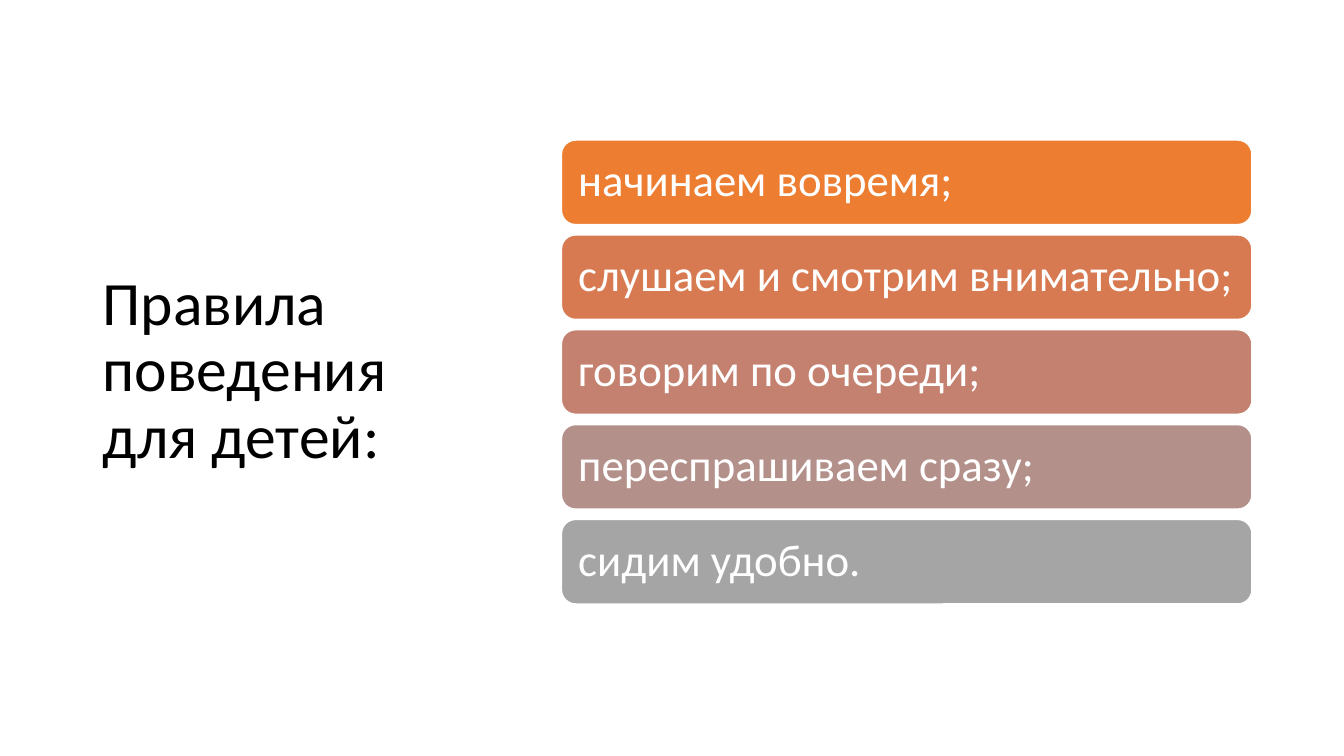
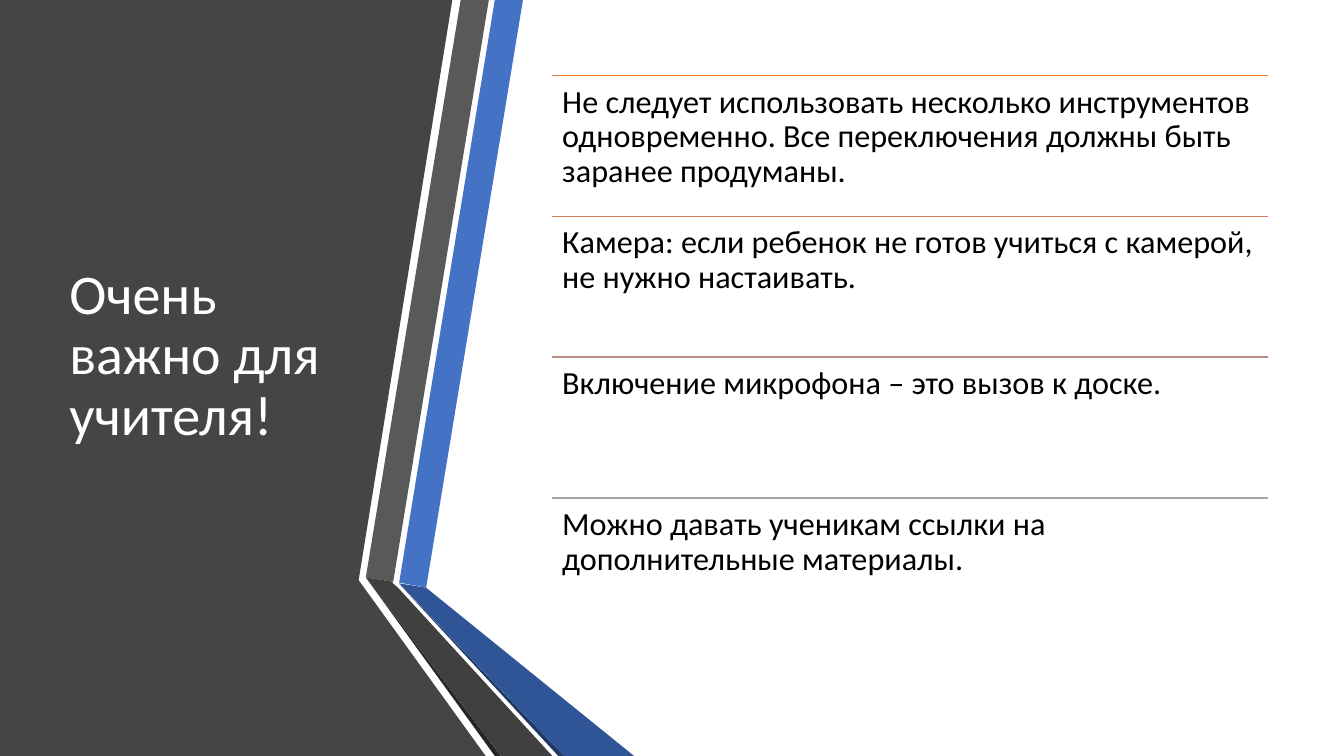
import dataclasses

import lxml.etree
import pptx
import pptx.dml.color
import pptx.enum.shapes
import pptx.enum.text
import pptx.oxml.ns
import pptx.shapes.autoshape
import pptx.slide
import pptx.text.text
import pptx.util

Cm = pptx.util.Cm
RGB = pptx.dml.color.RGBColor
Anchor = pptx.enum.text.MSO_ANCHOR

FONT = "Calibri"
WIDTH, HEIGHT = 33.87, 19.05
BLACK = RGB(0x00, 0x00, 0x00)
WHITE = RGB(0xFF, 0xFF, 0xFF)
ORANGE = RGB(0xED, 0x7D, 0x31)
TERRACOTTA = RGB(0xD8, 0x7A, 0x51)
ROSE = RGB(0xC4, 0x81, 0x70)
DUSTY_ROSE = RGB(0xB4, 0x90, 0x8B)
GRAY = RGB(0xA5, 0xA5, 0xA5)
RULE_TERRACOTTA = RGB(0xD1, 0x7B, 0x5C)
RULE_ROSE = RGB(0xB9, 0x8A, 0x82)
PANEL = RGB(0x45, 0x45, 0x45)
BLUE = RGB(0x44, 0x72, 0xC4)
DEEP_BLUE = RGB(0x2F, 0x55, 0x97)
NAVY = RGB(0x20, 0x38, 0x64)
STEEL = RGB(0x59, 0x59, 0x59)
CHARCOAL = RGB(0x40, 0x40, 0x40)
DARK = RGB(0x26, 0x26, 0x26)


@dataclasses.dataclass(frozen=True)
class Box:
    left: float
    top: float
    width: float
    height: float

    def lengths(self) -> list[pptx.util.Length]:
        return [Cm(v) for v in dataclasses.astuple(self)]

    def below(self, index: int, pitch: float) -> "Box":
        return dataclasses.replace(self, top=self.top + index * pitch)


@dataclasses.dataclass(frozen=True)
class Item:
    text: str
    color: RGB


@dataclasses.dataclass(frozen=True)
class Facet:
    color: RGB
    points: list[tuple[float, float]]


RULES_BOX = Box(14.15, 3.53, 17.4, 2.13)
RULES_PITCH = 2.39
RULES = [
    Item("начинаем вовремя;", ORANGE),
    Item("слушаем и смотрим внимательно;", TERRACOTTA),
    Item("говорим по очереди;", ROSE),
    Item("переспрашиваем сразу;", DUSTY_ROSE),
    Item("сидим удобно.", GRAY),
]

ADVICE_BOX = Box(13.92, 1.9, 18.03, 3.55)
ADVICE = [
    Item("Не следует использовать несколько инструментов одновременно. "
         "Все переключения должны быть заранее продуманы.", ORANGE),
    Item("Камера: если ребенок не готов учиться с камерой, "
         "не нужно настаивать.", RULE_TERRACOTTA),
    Item("Включение микрофона – это вызов к доске.", RULE_ROSE),
    Item("Можно давать ученикам ссылки на дополнительные материалы.", GRAY),
]

FACETS = [
    Facet(PANEL, [(0, 0), (11.4, 0), (9.04, 14.62), (12.24, HEIGHT), (0, HEIGHT)]),
    Facet(BLUE, [(10.06, 14.68), (10.74, 14.81), (13.18, 0), (12.47, 0)]),
    Facet(STEEL, [(12.32, 0), (11.61, 0), (9.22, 14.55), (9.91, 14.66)]),
    Facet(DARK, [(9.22, 14.55), (12.47, HEIGHT), (12.62, HEIGHT)]),
    Facet(NAVY, [(10.06, 14.71), (14.07, HEIGHT), (14.22, HEIGHT)]),
    Facet(DEEP_BLUE, [(10.06, 14.7), (14.22, HEIGHT), (15.98, HEIGHT), (10.74, 14.81)]),
    Facet(CHARCOAL, [(13.92, HEIGHT), (10.03, 14.81), (9.88, 14.68),
                     (9.91, 14.66), (9.22, 14.55), (12.62, HEIGHT)]),
]


def write(tf: pptx.text.text.TextFrame, text: str, size: float, color: RGB,
          anchor: Anchor, inset: float) -> None:
    tf.word_wrap = True
    tf.vertical_anchor = anchor
    tf.margin_left = tf.margin_right = tf.margin_top = tf.margin_bottom = Cm(inset)
    p = tf.paragraphs[0]
    p.alignment = pptx.enum.text.PP_ALIGN.LEFT
    p.line_spacing = 0.9
    r = p.add_run()
    r.text = text
    r.font.name = FONT
    r.font.size = pptx.util.Pt(size)
    r.font.color.rgb = color


def add_text(s: pptx.slide.Slide, box: Box, text: str, size: float, color: RGB,
             anchor: Anchor = Anchor.TOP) -> None:
    sp = s.shapes.add_textbox(*box.lengths())
    write(sp.text_frame, text, size, color, anchor, 0.25)


def add_title(s: pptx.slide.Slide, box: Box, text: str, size: float, color: RGB) -> None:
    add_text(s, box, text, size, color, Anchor.MIDDLE)


def paint(sp: pptx.shapes.autoshape.Shape, color: RGB) -> None:
    sp.shadow.inherit = False
    sp.fill.solid()
    sp.fill.fore_color.rgb = color
    sp.line.fill.background()


def add_bar(s: pptx.slide.Slide, box: Box, item: Item) -> None:
    sp = s.shapes.add_shape(pptx.enum.shapes.MSO_SHAPE.ROUNDED_RECTANGLE, *box.lengths())
    paint(sp, item.color)
    sp.line.color.rgb = WHITE
    sp.line.width = pptx.util.Pt(1)
    write(sp.text_frame, item.text, 32, WHITE, Anchor.MIDDLE, 0.32)


def add_facet(s: pptx.slide.Slide, facet: Facet) -> None:
    start, *rest = [(Cm(x), Cm(y)) for x, y in facet.points]
    builder = s.shapes.build_freeform(*start)
    builder.add_line_segments(rest, close=True)
    paint(builder.convert_to_shape(), facet.color)


def add_rule(s: pptx.slide.Slide, box: Box, color: RGB) -> None:
    left, top, width, _ = box.lengths()
    line = s.shapes.add_connector(
        pptx.enum.shapes.MSO_CONNECTOR.STRAIGHT, left, top, left + width, top)
    line.line.color.rgb = color
    line.line.width = pptx.util.Pt(1)
    lxml.etree.SubElement(line._element.spPr, pptx.oxml.ns.qn("a:effectLst"))


def build_rules(s: pptx.slide.Slide) -> None:
    add_title(s, Box(2.34, 1.73, 9.37, 15.29), "Правила поведения для детей:", 44, BLACK)
    for i, item in enumerate(RULES):
        add_bar(s, RULES_BOX.below(i, RULES_PITCH), item)


def build_advice(s: pptx.slide.Slide) -> None:
    for facet in FACETS:
        add_facet(s, facet)
    add_title(s, Box(1.5, 1.9, 7.72, 14.17), "Очень важно для учителя!", 40, WHITE)
    for i, item in enumerate(ADVICE):
        box = ADVICE_BOX.below(i, ADVICE_BOX.height)
        add_rule(s, box, item.color)
        add_text(s, box, item.text, 23, BLACK)


def main() -> None:
    prs = pptx.Presentation()
    prs.slide_width, prs.slide_height = Cm(WIDTH), Cm(HEIGHT)
    for build in (build_rules, build_advice):
        build(prs.slides.add_slide(prs.slide_layouts[6]))
    prs.save("out.pptx")


if __name__ == "__main__":
    main()
